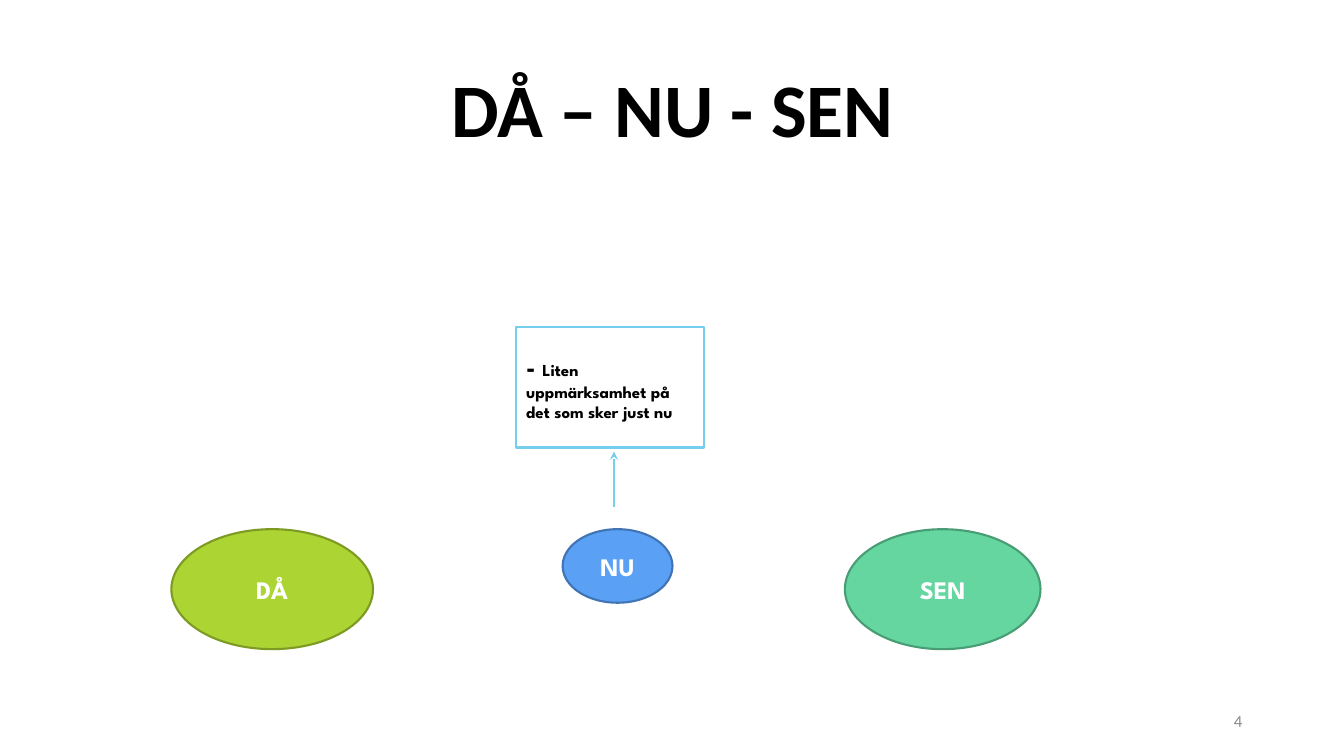
from dataclasses import dataclass

from lxml import etree
from pptx import Presentation
from pptx.dml.color import RGBColor
from pptx.enum.shapes import MSO_CONNECTOR, MSO_SHAPE
from pptx.enum.text import MSO_ANCHOR, MSO_AUTO_SIZE, PP_ALIGN
from pptx.oxml.ns import qn
from pptx.shapes.autoshape import Shape
from pptx.slide import Slide
from pptx.text.text import Font
from pptx.util import Inches, Pt

OVAL, RECT = MSO_SHAPE.OVAL, MSO_SHAPE.RECTANGLE
STRAIGHT = MSO_CONNECTOR.STRAIGHT
MIDDLE = MSO_ANCHOR.MIDDLE
NO_AUTOFIT = MSO_AUTO_SIZE.NONE
LEFT, CENTER, RIGHT = PP_ALIGN.LEFT, PP_ALIGN.CENTER, PP_ALIGN.RIGHT


@dataclass(frozen=True)
class Theme:
    title_font: str = "Calibri"
    body_font: str = "League Spartan"
    black: str = "000000"
    white: str = "FFFFFF"
    grey: str = "888888"
    sky: str = "75CEEC"
    title_size: float = 54
    label_size: float = 18
    small_size: float = 12
    outline: float = 1.5
    arrow: float = 0.75


@dataclass(frozen=True)
class Phase:
    label: str
    left: float
    width: float
    height: float
    fill: str
    line: str


THEME = Theme()
PHASE_TOP = 5.25
PHASES = [
    Phase("DÅ", 1.7, 2, 1.19, "ACD433", "7D9B23"),
    Phase("NU", 5.58, 1.09, 0.73, "5AA0F5", "4074B4"),
    Phase("SEN", 8.38, 1.94, 1.19, "65D6A0", "489D74"),
]


def style_font(font: Font, name: str, size: float, color: str, bold: bool) -> None:
    font.name = name
    font.size = Pt(size)
    font.bold = bold
    font.color.rgb = RGBColor.from_string(color)


def add_outlined(s: Slide, kind: MSO_SHAPE, left: float, top: float,
                 width: float, height: float, fill: str, line: str) -> Shape:
    sp = s.shapes.add_shape(kind, Inches(left), Inches(top), Inches(width), Inches(height))
    sp.shadow.inherit = False
    sp.fill.solid()
    sp.fill.fore_color.rgb = RGBColor.from_string(fill)
    sp.line.color.rgb = RGBColor.from_string(line)
    sp.line.width = Pt(THEME.outline)
    sp.text_frame.word_wrap = True
    sp.text_frame.vertical_anchor = MIDDLE
    return sp


def add_title(s: Slide) -> None:
    sp = s.shapes.title
    sp.left, sp.top, sp.width, sp.height = Inches(0.92), Inches(0.4), Inches(11.5), Inches(1.45)
    tf = sp.text_frame
    tf.text = "DÅ – NU - SEN"
    tf.auto_size = NO_AUTOFIT
    tf.vertical_anchor = MIDDLE
    p = tf.paragraphs[0]
    p.alignment = CENTER
    p.line_spacing = 0.9
    style_font(p.font, THEME.title_font, THEME.title_size, THEME.black, True)


def add_phase(s: Slide, phase: Phase) -> None:
    sp = add_outlined(s, OVAL, phase.left, PHASE_TOP, phase.width, phase.height,
                      phase.fill, phase.line)
    p = sp.text_frame.paragraphs[0]
    p.text = phase.label
    p.alignment = CENTER
    style_font(p.font, THEME.body_font, THEME.label_size, THEME.white, True)


def add_note_box(s: Slide) -> None:
    sp = add_outlined(s, RECT, 5.12, 3.24, 1.86, 1.2, THEME.white, THEME.sky)
    p = sp.text_frame.paragraphs[0]
    p.alignment = LEFT
    for text, size in (("- ", THEME.label_size),
                       ("Liten uppmärksamhet på det som sker just nu", THEME.small_size)):
        r = p.add_run()
        r.text = text
        style_font(r.font, THEME.body_font, size, THEME.black, True)


def add_arrow(s: Slide) -> None:
    x = Inches(6.09)
    arrow = s.shapes.add_connector(STRAIGHT, x, Inches(5.03), x, Inches(4.48))
    arrow.line.color.rgb = RGBColor.from_string(THEME.sky)
    arrow.line.width = Pt(THEME.arrow)
    etree.SubElement(arrow.line._get_or_add_ln(), qn("a:tailEnd"), type="stealth")
    etree.SubElement(arrow._element.spPr, qn("a:effectLst"))


def add_page_number(s: Slide) -> None:
    sp = s.shapes.add_textbox(Inches(9.42), Inches(6.95), Inches(3), Inches(0.4))
    tf = sp.text_frame
    tf.word_wrap = True
    tf.vertical_anchor = MIDDLE
    p = tf.paragraphs[0]
    p.text = "4"
    p.alignment = RIGHT
    style_font(p.font, THEME.title_font, THEME.small_size, THEME.grey, False)


def main() -> None:
    prs = Presentation()
    prs.slide_width, prs.slide_height = Inches(13.33), Inches(7.5)
    s = prs.slides.add_slide(prs.slide_layouts.get_by_name("Title Only"))
    add_title(s)
    for phase in PHASES:
        add_phase(s, phase)
    add_note_box(s)
    add_arrow(s)
    add_page_number(s)
    prs.save("out.pptx")


if __name__ == "__main__":
    main()
